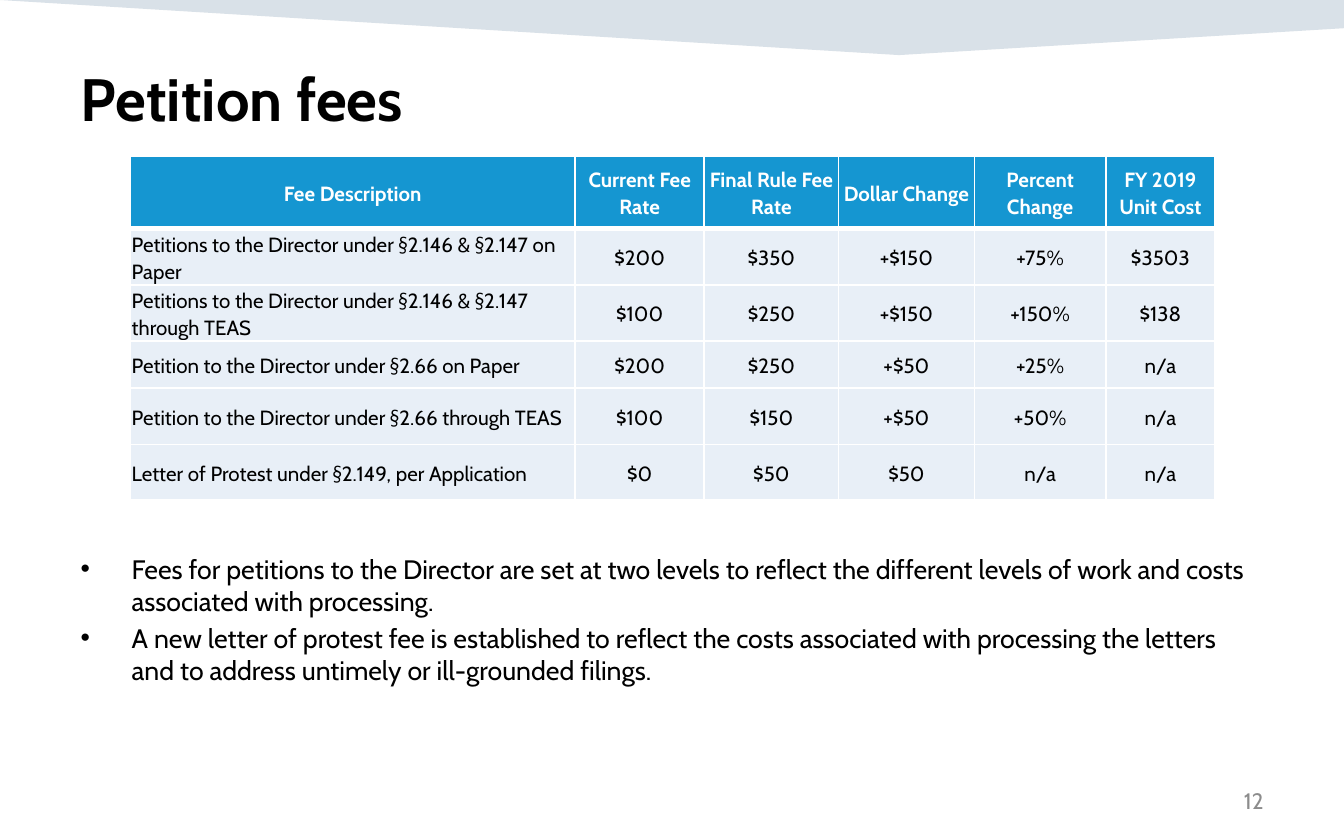
from pptx import Presentation
from pptx import util as u
from pptx.dml.color import RGBColor
from pptx.enum import text as t
from pptx.oxml.ns import qn
from lxml import etree

TITLE = "Petition fees"
HEAD = ["Fee Description", "Current Fee Rate", "Final Rule Fee Rate",
        "Dollar Change", "Percent Change", "FY 2019 Unit Cost"]
ROWS = [
    ["Petitions to the Director under §2.146 & §2.147 on Paper",
     "$200", "$350", "+$150", "+75%", "$3503"],
    ["Petitions to the Director under §2.146 & §2.147 through TEAS",
     "$100", "$250", "+$150", "+150%", "$138"],
    ["Petition to the Director under §2.66 on Paper",
     "$200", "$250", "+$50", "+25%", "n/a"],
    ["Petition to the Director under §2.66 through TEAS",
     "$100", "$150", "+$50", "+50%", "n/a"],
    ["Letter of Protest under §2.149, per Application",
     "$0", "$50", "$50", "n/a", "n/a"],
]
NOTES = [
    "Fees for petitions to the Director are set at two levels to reflect the "
    "different levels of work and costs associated with processing.",
    "A new letter of protest fee is established to reflect the costs associated "
    "with processing the letters and to address untimely or ill-grounded filings.",
]
PAGE = "12"
WIDTHS = [3.31, 0.96, 1, 1.01, 0.98, 0.81]
HEIGHTS = [0.54, 0.42, 0.42, 0.35, 0.42, 0.41]
BAND = [(0, 0), (10, 0), (10, 0.21), (6.69, 0.41)]
THEME = {
    "font": "Cabin", "ink": "000000", "white": "FFFFFF", "gray": "8C8C8C",
    "navy": "003865", "blue": "1596D1", "pale": "E8EFF7",
    "title": 32, "body": 14.3, "cell": 11, "page": 12,
}


def color(key):
    return RGBColor.from_string(THEME[key])


def style(para, size, ink="ink", bold=False, align=t.PP_ALIGN.LEFT):
    para.alignment = align
    for run in para.runs:
        font = run.font
        font.name, font.size, font.bold = THEME["font"], u.Pt(THEME[size]), bold
        font.color.rgb = color(ink)


def place(shape, left, top, width, height, anchor=t.MSO_ANCHOR.TOP):
    shape.left, shape.top = u.Inches(left), u.Inches(top)
    shape.width, shape.height = u.Inches(width), u.Inches(height)
    frame = shape.text_frame
    frame.word_wrap = True
    frame.auto_size = t.MSO_AUTO_SIZE.NONE
    frame.vertical_anchor = anchor
    return frame


def edge(cell, side, width):
    line = etree.SubElement(cell._tc.get_or_add_tcPr(), qn("a:ln" + side),
                            w=str(u.Pt(width)))
    fill = etree.SubElement(line, qn("a:solidFill"))
    etree.SubElement(fill, qn("a:srgbClr"), val=THEME["white"])


def draw_band(slide):
    start, *rest = [(u.Inches(x), u.Inches(y)) for x, y in BAND]
    pen = slide.shapes.build_freeform(*start)
    pen.add_line_segments(rest, close=True)
    band = pen.convert_to_shape()
    band.shadow.inherit = False
    band.line.fill.background()
    band.fill.solid()
    band.fill.fore_color.rgb = color("navy")
    tint = band._element.spPr.find(qn("a:solidFill"))[0]
    etree.SubElement(tint, qn("a:alpha"), val="15000")


def draw_table(slide):
    data = [HEAD] + ROWS
    table = slide.shapes.add_table(
        len(data), len(HEAD), u.Inches(0.97), u.Inches(1.16),
        u.Inches(sum(WIDTHS)), u.Inches(sum(HEIGHTS))).table
    for col, width in zip(table.columns, WIDTHS):
        col.width = u.Inches(width)
    for row, height in zip(table.rows, HEIGHTS):
        row.height = u.Inches(height)
    for r, row in enumerate(data):
        head = r == 0
        for c, word in enumerate(row):
            cell = table.cell(r, c)
            cell.text = word
            cell.vertical_anchor = t.MSO_ANCHOR.MIDDLE
            cell.margin_left = cell.margin_right = cell.margin_top = u.Inches(0.01)
            cell.margin_bottom = 0
            for side in "LRTB":
                thick = (r, side) in [(0, "B"), (1, "T")]
                edge(cell, side, 3 if thick else 1)
            cell.fill.solid()
            cell.fill.fore_color.rgb = color("blue" if head else "pale")
            para = cell.text_frame.paragraphs[0]
            left = c == 0 and not head
            style(para, "cell", "white" if head else "ink", head,
                  t.PP_ALIGN.LEFT if left else t.PP_ALIGN.CENTER)
            para.line_spacing, para.space_after = 1.07, u.Pt(8)


def draw_notes(slide):
    frame = place(slide.placeholders[1], 0.5, 4.06, 9, 1.18)
    frame.text = "\n".join(NOTES)
    for i, para in enumerate(frame.paragraphs):
        props = para._p.get_or_add_pPr()
        props.set("marL", str(u.Inches(0.38)))
        props.set("indent", str(u.Inches(-0.38)))
        etree.SubElement(props, qn("a:buFont"), typeface="Arial")
        etree.SubElement(props, qn("a:buChar"), char="•")
        para.space_before = u.Pt(2.9 if i else 0)
        style(para, "body")


def main():
    deck = Presentation()
    deck.slide_width, deck.slide_height = u.Inches(10), u.Inches(6.25)
    slide = deck.slides.add_slide(deck.slide_layouts[1])
    draw_band(slide)
    frame = place(slide.shapes.title, 0.5, 0.41, 9, 0.97)
    frame.text = TITLE
    style(frame.paragraphs[0], "title", bold=True)
    draw_notes(slide)
    draw_table(slide)
    box = slide.shapes.add_textbox(0, 0, 0, 0)
    frame = place(box, 7.17, 5.79, 2.33, 0.33, t.MSO_ANCHOR.MIDDLE)
    frame.text = PAGE
    style(frame.paragraphs[0], "page", "gray", align=t.PP_ALIGN.RIGHT)
    deck.save("out.pptx")


if __name__ == "__main__":
    main()
